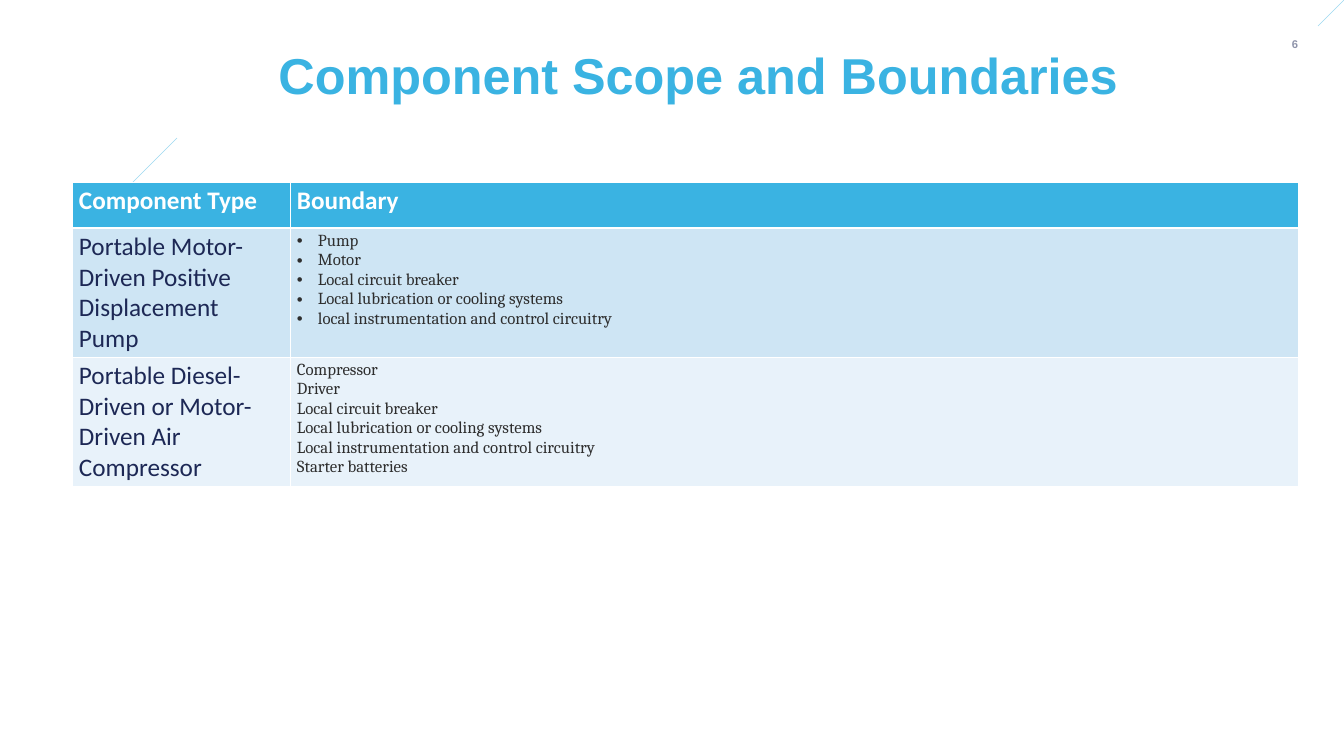
from lxml.etree import SubElement
from pptx import Presentation
from pptx.dml.color import RGBColor
from pptx.enum.shapes import MSO_CONNECTOR
from pptx.enum.text import MSO_ANCHOR, PP_ALIGN
from pptx.oxml.ns import qn
from pptx.util import Emu, Pt

SKY = RGBColor(0x3A, 0xB3, 0xE2)
NAVY = RGBColor(0x1D, 0x28, 0x55)
INK = RGBColor(0x2E, 0x2E, 0x2E)
WHITE = RGBColor(0xFF, 0xFF, 0xFF)
PALE_BLUE = RGBColor(0xCE, 0xE5, 0xF4)
PALER_BLUE = RGBColor(0xE8, 0xF2, 0xFA)

TITLE = "Component Scope and Boundaries"
PAGE_NUMBER = "6"
HEADINGS = ("Component Type", "Boundary")
COMPONENTS = [
    {
        "type": ["Portable Motor-Driven Positive", "Displacement Pump"],
        "boundary": [
            "Pump",
            "Motor",
            "Local circuit breaker",
            "Local lubrication or cooling systems",
            "local instrumentation and control circuitry",
        ],
        "bulleted": True,
        "fill": PALE_BLUE,
    },
    {
        "type": ["Portable Diesel-Driven or Motor-Driven Air Compressor"],
        "boundary": [
            "Compressor",
            "Driver",
            "Local circuit breaker",
            "Local lubrication or cooling systems",
            "Local instrumentation and control circuitry",
            "Starter batteries",
        ],
        "bulleted": False,
        "fill": PALER_BLUE,
    },
]
ACCENT_LINES = [(1318, 26, 1344, 0), (116, 199, 177, 138)]
TABLE_LEFT, TABLE_TOP = 72, 182
COLUMN_WIDTHS = (218, 1008)
ROW_HEIGHTS = (46, 129, 129)
BULLET_INDENT = 21


def px(length):
    """Turn pixels into EMU."""
    return Emu(round(length * 914400 / 67.2))


def set_half_transparent(color_parent):
    """Make the solid colour inside an element half transparent."""
    color = color_parent.find(".//" + qn("a:srgbClr"))
    SubElement(color, qn("a:alpha"), val="50000")


def add_run(paragraph, text, size, font, color, bold=False):
    """Add one styled run to a paragraph."""
    run = paragraph.add_run()
    run.text = text
    run.font.size = Pt(size)
    run.font.name = font
    run.font.bold = bold
    run.font.color.rgb = color
    return run


def add_label(slide, box, text, size, color, align, inset):
    """Add a bold, vertically centred line of text."""
    frame = slide.shapes.add_textbox(*map(px, box)).text_frame
    frame.word_wrap = True
    frame.vertical_anchor = MSO_ANCHOR.MIDDLE
    frame.margin_left = frame.margin_right = px(inset)
    frame.margin_top = frame.margin_bottom = px(inset / 2)
    paragraph = frame.paragraphs[0]
    paragraph.alignment = align
    return add_run(paragraph, text, size, "Arial", color, True)


def add_accent(slide, ends):
    """Add a faint diagonal line."""
    accent = slide.shapes.add_connector(MSO_CONNECTOR.STRAIGHT, *map(px, ends))
    accent.line.color.rgb = SKY
    accent.line.width = Pt(0.5)
    properties = accent.element.spPr
    set_half_transparent(properties)
    SubElement(properties, qn("a:effectLst"))


def fill_cell(cell, lines, fill, size, font, color, bold=False, bulleted=False, rule=1):
    """Write a cell's lines, its white borders and its fill."""
    cell.margin_left = cell.margin_right = px(7)
    cell.margin_top = cell.margin_bottom = px(3.4)
    properties = cell._tc.get_or_add_tcPr()
    for side, width in (("L", 1), ("R", 1), ("T", 1), ("B", rule)):
        border = SubElement(properties, qn("a:ln" + side), w=str(Pt(width)))
        solid = SubElement(border, qn("a:solidFill"))
        SubElement(solid, qn("a:srgbClr"), val=str(WHITE))
    cell.fill.solid()
    cell.fill.fore_color.rgb = fill
    frame = cell.text_frame
    for index, line in enumerate(lines):
        paragraph = frame.add_paragraph() if index else frame.paragraphs[0]
        if bulleted:
            layout = paragraph._p.get_or_add_pPr()
            layout.set("marL", str(px(BULLET_INDENT)))
            layout.set("indent", str(-px(BULLET_INDENT)))
            SubElement(layout, qn("a:buFont"), typeface="Arial")
            SubElement(layout, qn("a:buChar"), char="•")
        add_run(paragraph, line, size, font, color, bold)


def add_component_table(slide):
    """Add the table of components and their boundaries."""
    table = slide.shapes.add_table(
        len(ROW_HEIGHTS), len(COLUMN_WIDTHS), px(TABLE_LEFT), px(TABLE_TOP),
        px(sum(COLUMN_WIDTHS)), px(sum(ROW_HEIGHTS)),
    ).table
    for column, width in zip(table.columns, COLUMN_WIDTHS):
        column.width = px(width)
    for row, height in zip(table.rows, ROW_HEIGHTS):
        row.height = px(height)
    for column, heading in enumerate(HEADINGS):
        fill_cell(table.cell(0, column), [heading], SKY, 27, "Calibri", WHITE, bold=True, rule=3)
    for row, component in enumerate(COMPONENTS, 1):
        fill = component["fill"]
        fill_cell(table.cell(row, 0), component["type"], fill, 27, "Calibri", NAVY)
        fill_cell(table.cell(row, 1), component["boundary"], fill, 18, "Cambria", INK,
                  bulleted=component["bulleted"])


def main():
    """Build and save the slide."""
    deck = Presentation()
    deck.slide_width, deck.slide_height = px(1344), px(756)
    slide = deck.slides.add_slide(deck.slide_layouts[6])
    for ends in ACCENT_LINES:
        add_accent(slide, ends)
    number = add_label(slide, (1253, 24, 45, 40), PAGE_NUMBER, 12, NAVY, PP_ALIGN.RIGHT, 0)
    set_half_transparent(number.font._element)
    add_label(slide, (210, 28, 977, 93), TITLE, 54, SKY, PP_ALIGN.CENTER, 7)
    add_component_table(slide)
    deck.save("out.pptx")


if __name__ == "__main__":
    main()
